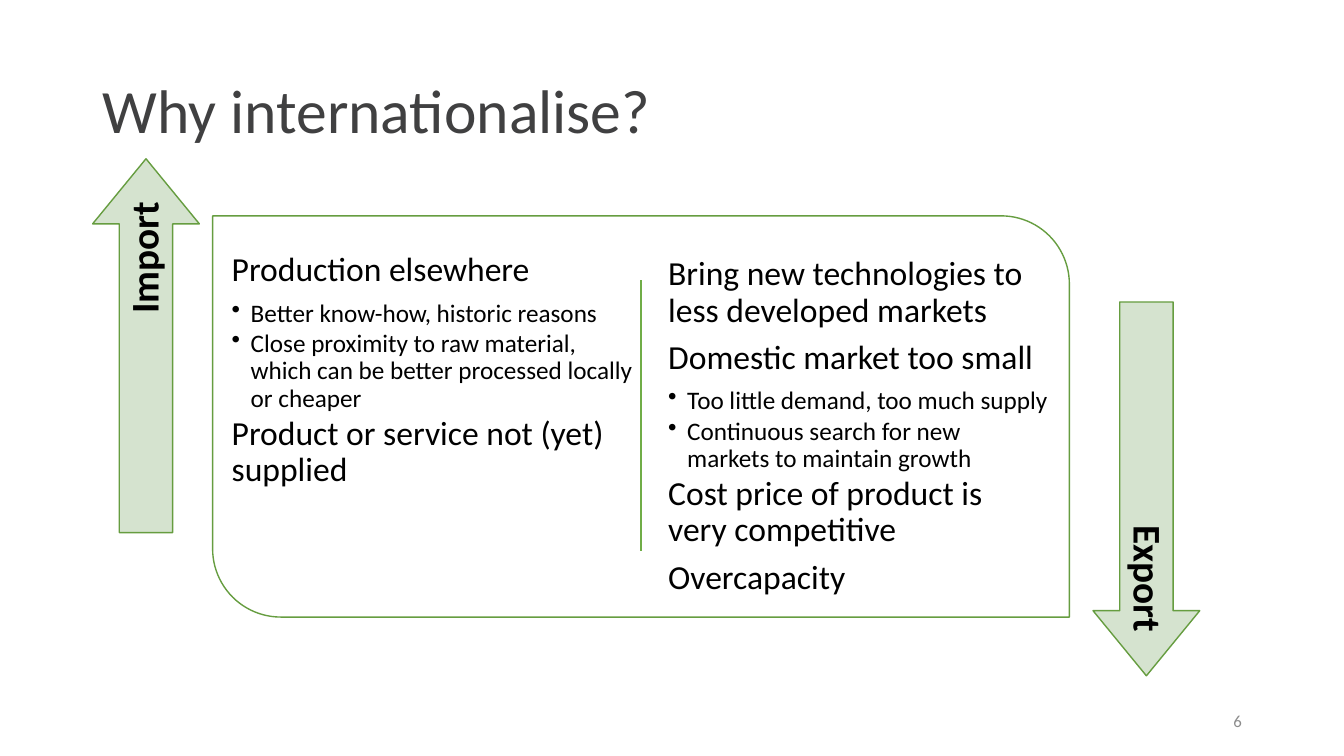
"""Build the slide on reasons for importing and exporting."""
from dataclasses import dataclass

from lxml import etree
from pptx import Presentation
from pptx.dml.color import RGBColor
from pptx.enum import shapes, text
from pptx.oxml import ns
from pptx.util import Cm, Pt


@dataclass(frozen=True)
class Theme:
    font: str = "Calibri"
    title: str = "404041"
    ink: str = "000000"
    number: str = "8C8C8C"
    panel: str = "FFFFFF"
    arrow: str = "D5E3CF"
    outline: str = "669D40"
    divider: str = "70AD47"
    title_size: int = 44
    label_size: int = 28
    reason_size: int = 24
    detail_size: int = 18
    number_size: int = 12


THEME = Theme()
TITLE = "Why internationalise?"
PAGE_NUMBER = "6"
TITLE_BOX = (2.34, 1.02, 29.21, 3.68)
NUMBER_BOX = (23.93, 17.65, 7.62, 1.02)
PANEL_BOX = (5.36, 5.44, 21.59, 10.11)
DIVIDER = (16.15, 7.06, 16.15, 13.89)
ARROW_SIZE = (9.42, 2.69)
LABEL_SIZE = (8.64, 1.35)

COLUMNS = [
    ((5.59, 6.12, 10.67, 7.34), [
        ("Production elsewhere", [
            "Better know-how, historic reasons",
            "Close proximity to raw material, which can be better processed locally or cheaper",
        ]),
        ("Product or service not (yet) supplied", []),
    ]),
    ((16.59, 6.22, 10.08, 7.34), [
        ("Bring new technologies to less developed markets", []),
        ("Domestic market too small", [
            "Too little demand, too much supply",
            "Continuous search for new markets to maintain growth",
        ]),
        ("Cost price of product is very competitive", []),
        ("Overcapacity", []),
    ]),
]
ARROWS = [
    ("Import", 270, (3.68, 8.71), (3.68, 9.11)),
    ("Export", 90, (28.89, 12.32), (28.89, 11.9)),
]


def lengths(values):
    return [Cm(value) for value in values]


def centred(centre, size):
    return [middle - extent / 2 for middle, extent in zip(centre, size)] + list(size)


def style(paragraph, size, color, bold=False):
    font = paragraph.font
    font.name, font.size, font.bold = THEME.font, Pt(size), bold
    font.color.rgb = RGBColor.from_string(color)


def add_text_box(slide, box, inset=0.25, anchor=text.MSO_ANCHOR.TOP):
    shape = slide.shapes.add_textbox(*lengths(box))
    frame = shape.text_frame
    frame.word_wrap = True
    frame.vertical_anchor = anchor
    frame.margin_left = frame.margin_right = Cm(inset)
    frame.margin_top = frame.margin_bottom = Cm(inset)
    return shape


def add_outlined_shape(slide, kind, box, fill, adjustments):
    shape = slide.shapes.add_shape(kind, *lengths(box))
    shape.shadow.inherit = False
    shape.fill.solid()
    shape.fill.fore_color.rgb = RGBColor.from_string(fill)
    shape.line.color.rgb = RGBColor.from_string(THEME.outline)
    shape.line.width = Pt(1)
    for index, value in enumerate(adjustments):
        shape.adjustments[index] = value
    return shape


def add_bullet(paragraph):
    properties = paragraph._p.get_or_add_pPr()
    properties.set("marL", str(Cm(0.48)))
    properties.set("indent", str(Cm(-0.48)))
    etree.SubElement(properties, ns.qn("a:buChar")).set("char", "•")


def add_column(slide, box, reasons):
    frame = add_text_box(slide, box).text_frame
    lines = []
    for reason, details in reasons:
        lines.append((reason, False))
        lines.extend((detail, True) for detail in details)
    for index, (line, is_detail) in enumerate(lines):
        paragraph = frame.add_paragraph() if index else frame.paragraphs[0]
        paragraph.text = line
        paragraph.line_spacing = 0.9
        paragraph.space_after = Pt(2.5 if is_detail else 8)
        if is_detail:
            paragraph.level = 1
            add_bullet(paragraph)
        style(paragraph, THEME.detail_size if is_detail else THEME.reason_size, THEME.ink)


def add_arrow(slide, label, rotation, arrow_centre, label_centre):
    arrow = add_outlined_shape(slide, shapes.MSO_SHAPE.RIGHT_ARROW,
                               centred(arrow_centre, ARROW_SIZE), THEME.arrow, (0.5, 0.61))
    caption = add_text_box(slide, centred(label_centre, LABEL_SIZE), 0.3, text.MSO_ANCHOR.MIDDLE)
    arrow.rotation = caption.rotation = rotation
    paragraph = caption.text_frame.paragraphs[0]
    paragraph.text = label
    paragraph.alignment = text.PP_ALIGN.RIGHT
    paragraph.line_spacing = 0.9
    style(paragraph, THEME.label_size, THEME.ink, bold=True)


def add_title(slide):
    title = slide.shapes.title
    title.left, title.top, title.width, title.height = lengths(TITLE_BOX)
    title.text_frame.vertical_anchor = text.MSO_ANCHOR.MIDDLE
    paragraph = title.text_frame.paragraphs[0]
    paragraph.text = TITLE
    paragraph.alignment = text.PP_ALIGN.LEFT
    paragraph.line_spacing = 0.9
    style(paragraph, THEME.title_size, THEME.title)


def add_divider(slide):
    line = slide.shapes.add_connector(shapes.MSO_CONNECTOR.STRAIGHT, *lengths(DIVIDER))
    line.line.color.rgb = RGBColor.from_string(THEME.divider)
    line.line.width = Pt(1)
    etree.SubElement(line._element.spPr, ns.qn("a:effectLst"))


def add_page_number(slide):
    box = add_text_box(slide, NUMBER_BOX, anchor=text.MSO_ANCHOR.MIDDLE)
    paragraph = box.text_frame.paragraphs[0]
    paragraph.text = PAGE_NUMBER
    paragraph.alignment = text.PP_ALIGN.RIGHT
    style(paragraph, THEME.number_size, THEME.number)


def main():
    presentation = Presentation()
    presentation.slide_width, presentation.slide_height = Cm(33.87), Cm(19.05)
    slide = presentation.slides.add_slide(presentation.slide_layouts[5])
    add_title(slide)
    add_outlined_shape(slide, shapes.MSO_SHAPE.ROUND_2_DIAG_RECTANGLE, PANEL_BOX,
                       THEME.panel, (0, 0.17))
    add_divider(slide)
    for box, reasons in COLUMNS:
        add_column(slide, box, reasons)
    for arrow in ARROWS:
        add_arrow(slide, *arrow)
    add_page_number(slide)
    presentation.save("out.pptx")


if __name__ == "__main__":
    main()
